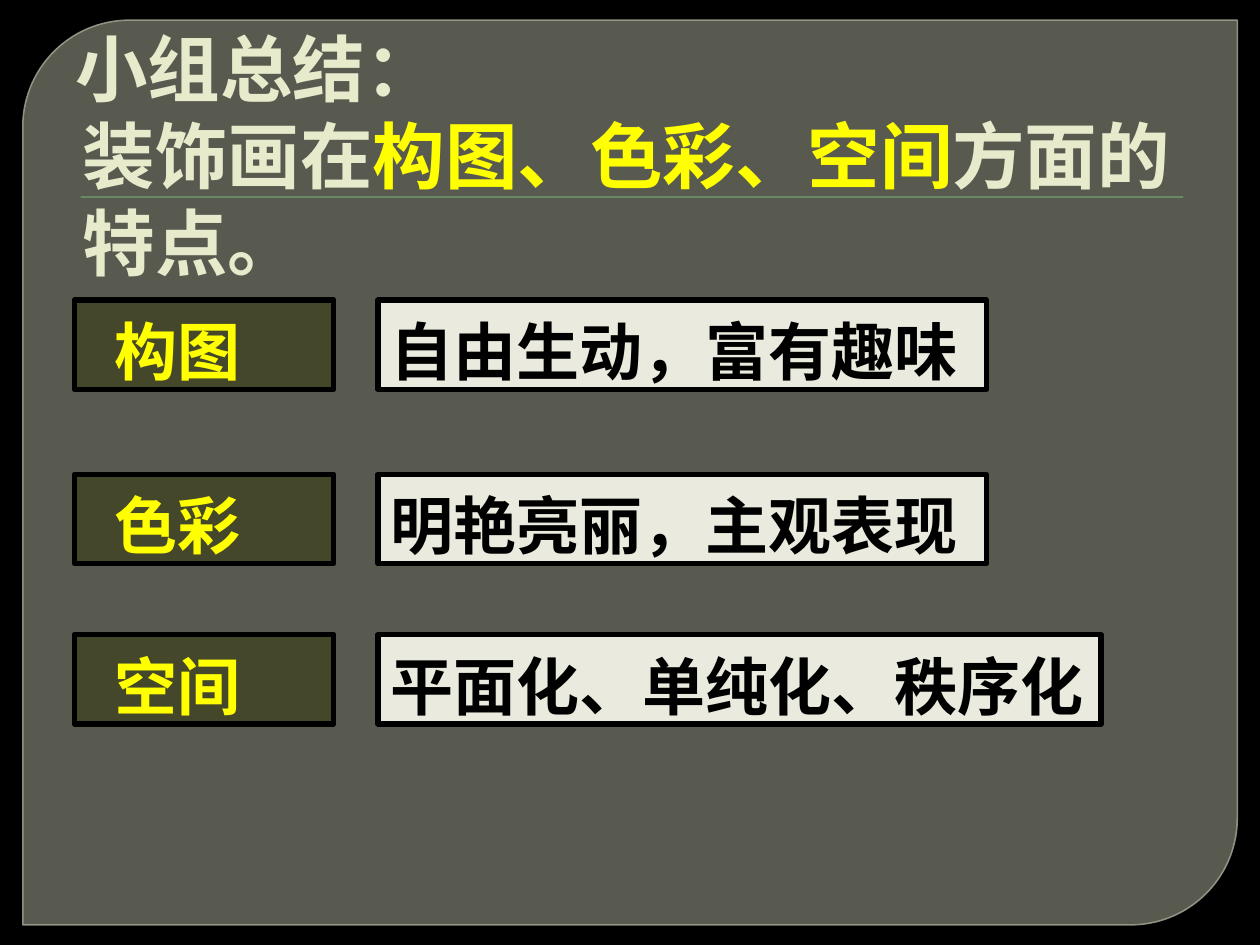
"""Build the group summary slide on decorative painting."""
from lxml import etree
from pptx import Presentation
from pptx.dml.color import RGBColor
from pptx.enum.shapes import MSO_SHAPE
from pptx.enum.text import MSO_ANCHOR, PP_ALIGN
from pptx.oxml.ns import qn
from pptx.util import Pt

RECTANGLE = MSO_SHAPE.RECTANGLE
PANEL = MSO_SHAPE.ROUND_2_DIAG_RECTANGLE
TOP, BOTTOM = MSO_ANCHOR.TOP, MSO_ANCHOR.BOTTOM
LEFT = PP_ALIGN.LEFT
COLORS = {
    "background": "000000", "panel": "888B7B", "panel_line": "9DA090",
    "rule": "72A376", "title": "E7EACB", "highlight": "FFFF00",
    "label": "45472B", "answer": "EAEBDE", "black": "000000",
}
CJK_FONT, LATIN_FONT = "Noto Sans CJK SC", "Roboto Slab"


class SlideBuilder:
    """Hold the style and the current slide."""

    def __init__(self, presentation):
        self.slide = presentation.slides.add_slide(presentation.slide_layouts[6])
        self.paint(self.slide.background.fill, "background")

    def paint(self, fill, color, opacity=100):
        fill.solid()
        fill.fore_color.rgb = RGBColor.from_string(COLORS[color])
        if opacity < 100:
            # The colour element is the only place that carries opacity.
            element = fill._xPr.find(".//" + qn("a:srgbClr"))
            etree.SubElement(element, qn("a:alpha"), val=str(opacity * 1000))

    def shape(self, kind, box, fill, opacity=100, line=None, width=0, line_opacity=100):
        shape = self.slide.shapes.add_shape(kind, *map(Pt, box))
        shape.shadow.inherit = False
        self.paint(shape.fill, fill, opacity)
        if line:
            shape.line.width = Pt(width)
            self.paint(shape.line.fill, line, line_opacity)
        else:
            shape.line.fill.background()
        return shape

    def text(self, shape, runs, size, spacing, font, anchor=TOP, inset=7.2, hanging=0):
        frame = shape.text_frame
        frame.word_wrap = True
        frame.vertical_anchor = anchor
        frame.margin_left, frame.margin_bottom = Pt(inset), 0
        paragraph = frame.paragraphs[0]
        paragraph.alignment = LEFT
        paragraph.line_spacing = Pt(spacing)
        properties = paragraph._p.get_or_add_pPr()
        properties.set("marL", str(Pt(hanging)))
        properties.set("indent", str(-Pt(hanging)))
        for words, color in runs:
            if words == "\v":
                paragraph.add_line_break()
                continue
            run = paragraph.add_run()
            run.text = words
            run.font.size, run.font.bold, run.font.name = Pt(size), True, font
            run.font.color.rgb = RGBColor.from_string(COLORS[color])
            etree.SubElement(run._r.get_or_add_rPr(), qn("a:ea"), typeface=CJK_FONT)

    def title(self, box, runs):
        shape = self.slide.shapes.add_textbox(*map(Pt, box))
        self.text(shape, runs, 41.4, 49.7, CJK_FONT, anchor=BOTTOM, hanging=4.3)

    def row(self, top, label, answer, answer_width):
        cells = (
            (42.5, 148.3, "label", label, "highlight", CJK_FONT, 23),
            (216, answer_width, "answer", answer, "black", LATIN_FONT, 7.2),
        )
        for left, width, fill, words, color, font, inset in cells:
            shape = self.shape(RECTANGLE, (left, top, width, 51.1), fill,
                               line="black", width=3)
            self.text(shape, [(words, color)], 36, 46.8, font, inset=inset)


def main():
    presentation = Presentation()
    presentation.slide_width, presentation.slide_height = Pt(720), Pt(540)
    builder = SlideBuilder(presentation)
    panel = builder.shape(PANEL, (13, 11.5, 694, 517), "panel", 65,
                          "panel_line", 0.87, 88)
    panel.adjustments[0], panel.adjustments[1] = 0.118, 0
    builder.shape(RECTANGLE, (46.1, 112.2, 630, 0.75), "rule")
    builder.title((36, 20.2, 648, 142.6), [
        ("小组总结：", "title"), ("\v", None), ("装饰画在", "title"),
        ("构图、色彩、空间", "highlight"), ("方面的特点。", "title"),
    ])
    for row in (
        (171.4, "构图", "自由生动，富有趣味", 347.8),
        (271, "色彩", "明艳亮丽，主观表现", 347.8),
        (362.6, "空间", "平面化、单纯化、秩序化", 413.2),
    ):
        builder.row(*row)
    presentation.save("out.pptx")


if __name__ == "__main__":
    main()
